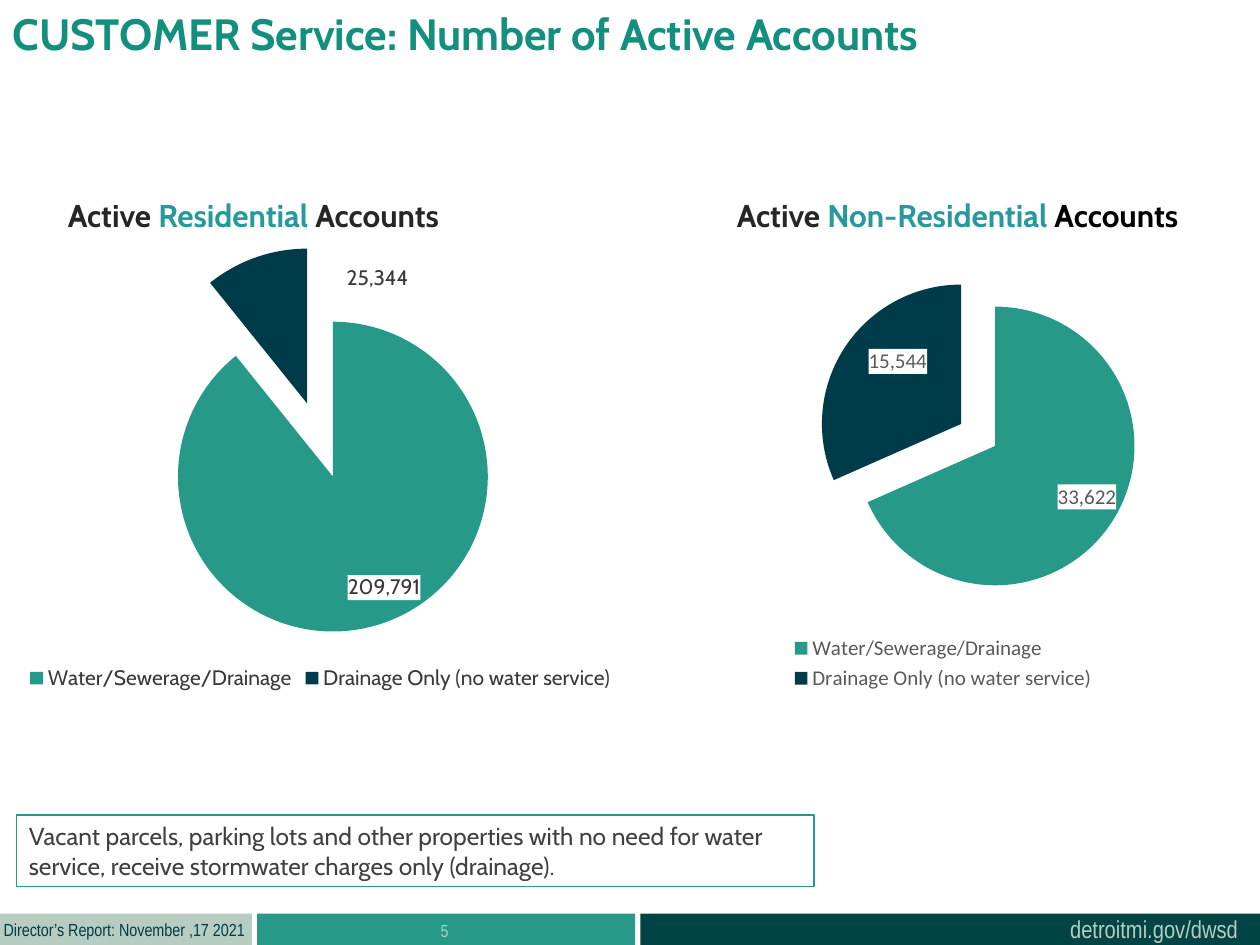
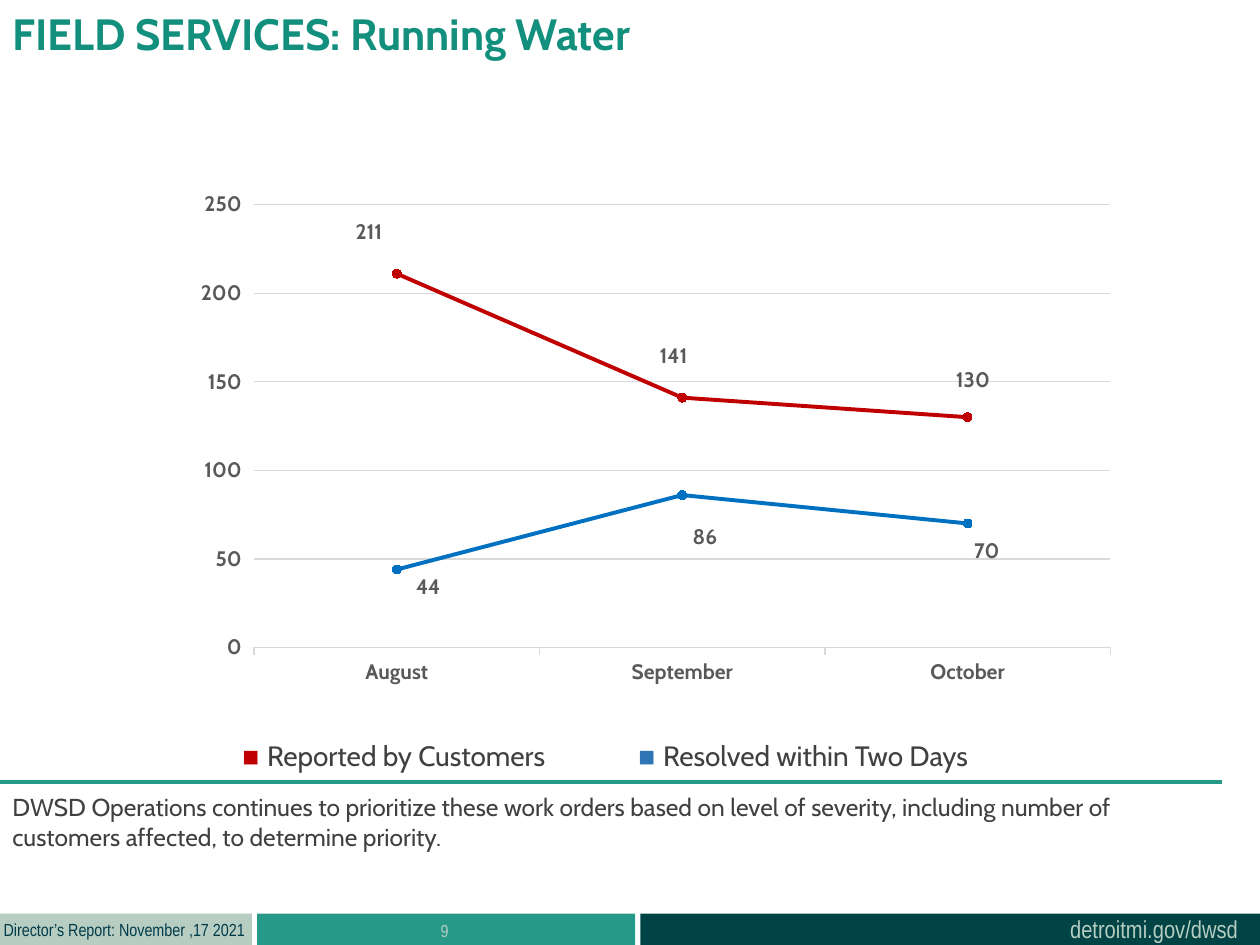
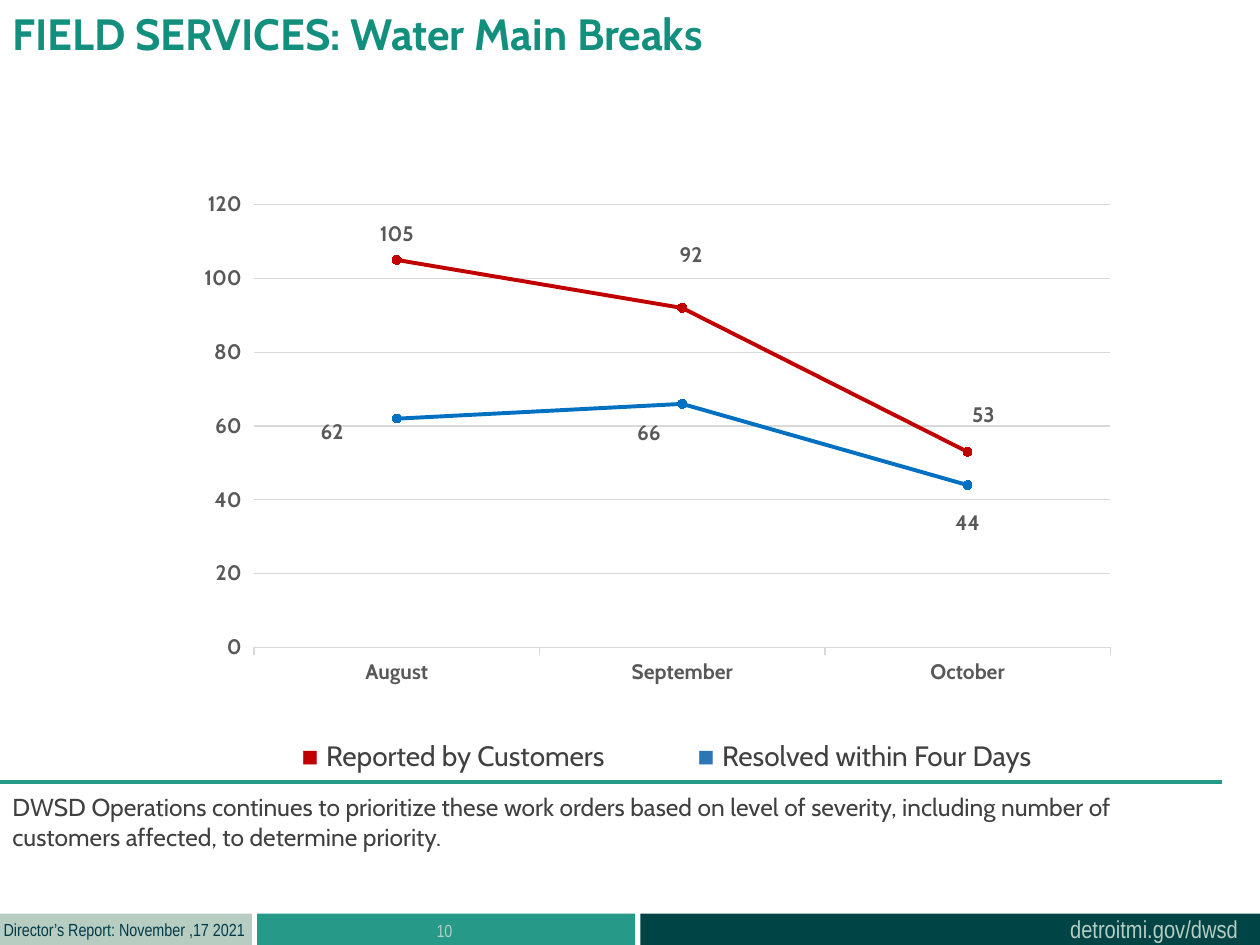
from lxml import etree
from pptx import Presentation
from pptx.chart.data import CategoryChartData as ChartData
from pptx.dml.color import RGBColor
from pptx.enum.chart import XL_CHART_TYPE as ChartType
from pptx.enum.chart import XL_LABEL_POSITION as LabelSpot
from pptx.enum.chart import XL_LEGEND_POSITION as LegendSpot
from pptx.enum.chart import XL_MARKER_STYLE as Marker
from pptx.enum.chart import XL_TICK_MARK as Tick
from pptx.enum.shapes import MSO_CONNECTOR as Connector
from pptx.enum.shapes import MSO_SHAPE as Shape
from pptx.enum.text import MSO_ANCHOR as Anchor
from pptx.enum.text import PP_ALIGN as Align
from pptx.oxml.ns import qn
from pptx.util import Pt

COLORS = {
    "teal": "279989", "title": "138F7E", "accent": "27999D", "deep": "004445",
    "navy": "003B49", "sage": "B7CDC2", "body": "404040", "dark": "262626",
    "black": "000000", "white": "FFFFFF", "gray": "595959", "char": "3B3838",
    "grid": "D9D9D9", "red": "C00000", "blue": "0070C0", "key blue": "2E75B6",
}
WIDTH, HEIGHT = 720, 540

# Text formats
TITLE = dict(name="Cabin", size=25, bold=True, color="title")
HEADING = dict(name="Cabin", size=18, bold=True, color="dark")
NOTE = dict(name="Cabin", size=14, color="body")
KEY = dict(name="Cabin", size=16, color="body")
FOOTER = dict(name="Arial Narrow", size=10, color="navy")
AXIS = dict(name="Cabin", size=12, bold=True, color="gray")
RESIDENTIAL = dict(name="Cabin", size=12, color="char")
NON_RESIDENTIAL = dict(name="Calibri", size=12, color="gray")

MONTHS = ["August", "September", "October"]
SERVICES = ["Water/Sewerage/Drainage", "Drainage Only (no water service)"]
PRIORITY_NOTE = ("DWSD Operations continues to prioritize these work orders based on level "
                 "of severity, including number of customers affected, to determine priority.")

# Chart extension that holds the leader line switch
C15 = "http://schemas.microsoft.com/office/drawing/2012/chart"
LABEL_EXTENSION = "{CE6537A1-D6FC-4f65-9D91-7224C49458BB}"


def rgb(color):
    return RGBColor.from_string(COLORS[color])


def set_font(font, style):
    for key, value in style.items():
        if key == "color":
            font.color.rgb = rgb(value)
        else:
            setattr(font, key, Pt(value) if key == "size" else value)


def set_line(line, color, width):
    line.color.rgb = rgb(color)
    line.width = Pt(width)


def fill_solid(part, color):
    part.fill.solid()
    part.fill.fore_color.rgb = rgb(color)


def write(frame, spans, style, wrap=True, tab=None, **layout):
    """Write one paragraph; each span is a text with its changes to the style."""
    frame.word_wrap = wrap
    frame.vertical_anchor = Anchor.TOP
    para = frame.paragraphs[0]
    if tab:
        stops = etree.SubElement(para._p.get_or_add_pPr(), qn("a:tabLst"))
        etree.SubElement(stops, qn("a:tab"), pos=str(Pt(tab)), algn="l")
    for key, value in layout.items():
        setattr(para, key, value)
    for text, changes in spans:
        span = para.add_run()
        span.text = text
        set_font(span.font, {**style, **changes})


def add_text(page, box, spans, style, **layout):
    if isinstance(spans, str):
        spans = [(spans, {})]
    area = page.shapes.add_textbox(*map(Pt, box))
    write(area.text_frame, spans, style, **layout)


def add_box(page, box, fill=None, line=None):
    shape = page.shapes.add_shape(Shape.RECTANGLE, *map(Pt, box))
    shape.shadow.inherit = False
    if fill:
        fill_solid(shape, fill)
    else:
        shape.fill.background()
    if line:
        set_line(shape.line, line, 0.75)
    else:
        shape.line.fill.background()
    return shape


def add_rule(page, left, top, width):
    rule = page.shapes.add_connector(
        Connector.STRAIGHT, Pt(left + width), Pt(top), Pt(left), Pt(top))
    set_line(rule.line, "teal", 2.25)
    etree.SubElement(rule._element.spPr, qn("a:effectLst"))


# Chart helpers
def make_layout(inner=False, **values):
    layout = etree.Element(qn("c:layout"))
    manual = etree.SubElement(layout, qn("c:manualLayout"))
    if inner:
        etree.SubElement(manual, qn("c:layoutTarget"), val="inner")
        for side in "xy":
            etree.SubElement(manual, qn(f"c:{side}Mode"), val="edge")
    for key, value in values.items():
        etree.SubElement(manual, qn(f"c:{key}"), val=f"{value:.4f}")
    return layout


def add_chart(page, kind, box, categories, rows, plot_area):
    """Add a chart whose plot area is given in shares of the box."""
    data = ChartData(number_format="#,##0")
    data.categories = categories
    for number, values in enumerate(rows, 1):
        data.add_series(f"Series {number}", values)
    chart = page.shapes.add_chart(kind, *map(Pt, box), data).chart
    chart.has_title = chart.has_legend = False
    set_font(chart.font, dict(name="Calibri", size=10, color="black"))
    area = chart._chartSpace.chart.plotArea
    for old in area.findall(qn("c:layout")):
        area.remove(old)
    area.insert(0, make_layout(inner=True, **dict(zip("xywh", plot_area))))
    chart.plots[0].vary_by_categories = False
    return chart


def hide_leader_lines(series):
    labels = series._element.find(qn("c:dLbls"))
    for old in labels.findall(qn("c:showLeaderLines")):
        labels.remove(old)
    etree.SubElement(labels, qn("c:showLeaderLines"), val="0")
    extensions = etree.SubElement(labels, qn("c:extLst"))
    extension = etree.SubElement(extensions, qn("c:ext"), uri=LABEL_EXTENSION)
    etree.SubElement(extension, f"{{{C15}}}showLeaderLines", nsmap={"c15": C15}, val="0")


def label_points(series, box, style, spots, shifts, fill=None):
    """Label each point, moved by its shift in points from its spot."""
    series.data_labels.show_value = True
    for index, (spot, (right, down)) in enumerate(zip(spots, shifts)):
        label = series.points[index].data_label
        set_font(label.font, style)
        label.position = spot
        node = series._element.xpath(f"c:dLbls/c:dLbl[c:idx/@val='{index}']")[0]
        node.insert(1, make_layout(x=right / box[2], y=down / box[3]))
        if fill:
            back = etree.Element(qn("c:spPr"))
            solid = etree.SubElement(back, qn("a:solidFill"))
            etree.SubElement(solid, qn("a:srgbClr"), val=COLORS[fill])
            node.find(qn("c:txPr")).addprevious(back)
    hide_leader_lines(series)


def add_pie(page, box, values, explosions, plot_area, style, shifts):
    chart = add_chart(page, ChartType.PIE, box, SERVICES, [values], plot_area)
    chart.plots[0].vary_by_categories = True
    series = chart.plots[0].series[0]
    for index, (color, explosion) in enumerate(zip(("teal", "navy"), explosions)):
        fill_solid(series.points[index].format, color)
        point = series._element.findall(qn("c:dPt"))[index]
        point.find(qn("c:spPr")).addprevious(
            etree.Element(qn("c:explosion"), val=str(explosion)))
    label_points(series, box, style, (LabelSpot.INSIDE_END, LabelSpot.CENTER),
                 shifts, fill="white")
    chart.has_legend = True
    chart.legend.position = LegendSpot.BOTTOM
    chart.legend.include_in_layout = False
    set_font(chart.legend.font, style)


def add_trend(page, box, rows, shifts, top_value, step):
    chart = add_chart(page, ChartType.LINE_MARKERS, box, MONTHS, rows,
                      (0.115, 0.021, 0.877, 0.791))
    for series, color, moves in zip(chart.plots[0].series, ("red", "blue"), shifts):
        series.smooth = False
        set_line(series.format.line, color, 2.25)
        series.marker.style = Marker.CIRCLE
        series.marker.size = 5
        fill_solid(series.marker.format, color)
        set_line(series.marker.format.line, color, 0.75)
        label_points(series, box, AXIS, [LabelSpot.CENTER] * len(moves), moves)
    for axis in (chart.category_axis, chart.value_axis):
        set_font(axis.tick_labels.font, AXIS)
        axis.major_tick_mark = Tick.OUTSIDE
        axis.minor_tick_mark = Tick.NONE
    set_line(chart.category_axis.format.line, "grid", 0.75)
    scale = dict(minimum_scale=0, maximum_scale=top_value, major_unit=step,
                 has_major_gridlines=True)
    for key, value in scale.items():
        setattr(chart.value_axis, key, value)
    chart.value_axis.format.line.fill.background()
    set_line(chart.value_axis.major_gridlines.format.line, "grid", 0.75)


# Shared frame
def add_footer(page, number, top=HEIGHT - 18):
    for left, width, color in ((147, 216, "teal"), (366, 354, "deep"), (0, 144, "sage")):
        add_box(page, (left, top, width, 18), fill=color)
    add_text(page, (604.4, top - 3.4, 112, 24.5), "detroitmi.gov/dwsd",
             {**FOOTER, "size": 14, "color": "sage"}, wrap=False)
    add_text(page, (-5, top - 0.4, 153.4, 19.4), "Director’s Report: November ,17 2021",
             FOOTER, wrap=False)
    add_text(page, (146, top, 216, 29), str(number), {**FOOTER, "color": "sage"},
             alignment=Align.CENTER)


def start_page(deck, title, number):
    page = deck.slides.add_slide(deck.slide_layouts[6])
    add_footer(page, number)
    add_text(page, (0, 0.4, 546.5, 55.5), title, TITLE)
    return page


# Slide types
def accounts_page(deck):
    page = start_page(deck, "CUSTOMER Service: Number of Active Accounts", 5)
    note = add_box(page, (9.4, 465.8, 455.8, 41), line="teal")
    write(note.text_frame, [(
        "Vacant parcels, parking lots and other properties with no need for water service, "
        "receive stormwater charges only (drainage).", {})], NOTE, alignment=Align.LEFT)
    add_pie(page, (358, 129.6, 362, 268), (33622, 15544), (0, 29),
            (0.362, 0.17, 0.44, 0.595), NON_RESIDENTIAL, [(6, -5), (-3, -14)])
    add_pie(page, (-7.4, 116, 381, 281.5), (209791, 25344), (25, 25),
            (0.267, 0.167, 0.465, 0.629), RESIDENTIAL, [(22, -9), (55, -30)])
    spans = [("Active ", {}), ("Residential ", {"color": "accent"}),
             ("Accounts\tActive ", {}), ("Non-Residential", {"color": "accent"}),
             (" Accounts", {"color": "black"})]
    add_text(page, (31.7, 111, 659, 29.5), spans, HEADING, tab=382.3, line_spacing=0.9)


def field_page(deck, title, number, deadline, key_left, **trend):
    page = start_page(deck, f"FIELD SERVICES: {title}", number)
    add_trend(page, (81, 109.8, 558, 320.4), **trend)
    add_rule(page, 0, 447, 698.4)
    add_text(page, (0, 449.3, 698.4, 41), PRIORITY_NOTE, NOTE)
    square = dict(name="Arial")
    spans = [("■ ", {**square, "color": "red"}), ("Reported by Customers\t", {}),
             ("■ ", {**square, "color": "key blue"}),
             (f"Resolved within {deadline} Days", {})]
    add_text(page, (key_left, 418.3, 447, 26.6), spans, KEY, tab=226.3)


def main():
    deck = Presentation()
    deck.slide_width, deck.slide_height = Pt(WIDTH), Pt(HEIGHT)
    accounts_page(deck)
    field_page(deck, "Running Water", 9, "Two", 131.4, top_value=250, step=50,
               rows=[(211, 141, 130), (44, 86, 70)],
               shifts=[[(-16, -24), (-5, -24), (3, -21)], [(18, 10), (13, 24), (11, 16)]])
    field_page(deck, "Water Main Breaks", 10, "Four", 165.2, top_value=120, step=20,
               rows=[(105, 92, 53), (62, 66, 44)],
               shifts=[[(0, -15), (5, -30), (9, -21)], [(-37, 8), (-19, 17), (0, 22)]])
    deck.save("out.pptx")


if __name__ == "__main__":
    main()
